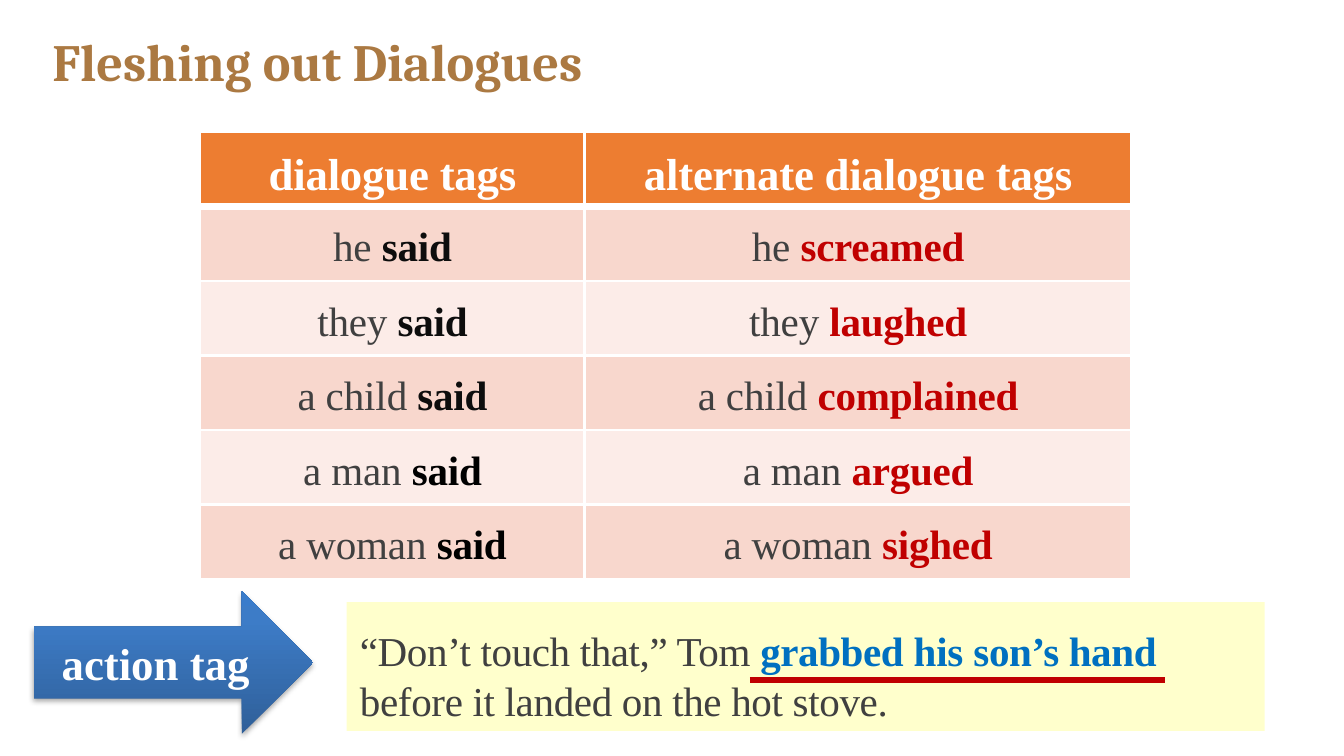
import copy

import pptx
import pptx.dml.color
import pptx.enum.shapes
import pptx.enum.text
import pptx.oxml.ns
import pptx.util
from lxml import etree

RGB = pptx.dml.color.RGBColor
Pt = pptx.util.Pt
Inches = pptx.util.Inches
qn = pptx.oxml.ns.qn
SHAPE = pptx.enum.shapes.MSO_SHAPE
ANCHOR = pptx.enum.text.MSO_ANCHOR
ALIGN = pptx.enum.text.PP_ALIGN

WHITE = RGB(0xFF, 0xFF, 0xFF)
BLACK = RGB(0, 0, 0)
INK = RGB(0x0D, 0x0D, 0x0D)
GREY = RGB(0x40, 0x40, 0x40)
RED = RGB(0xC0, 0, 0)
BLUE = RGB(0, 0x70, 0xC0)
BROWN = RGB(0xAB, 0x79, 0x42)
ORANGE = RGB(0xED, 0x7D, 0x31)
BANDS = [RGB(0xF8, 0xD7, 0xCD), RGB(0xFC, 0xEC, 0xE8)]
CREAM = RGB(0xFF, 0xFF, 0xCC)
STOPS = [(0, RGB(0x2F, 0x5F, 0x99)), (0.8, RGB(0x3D, 0x7C, 0xC7)),
         (1, RGB(0x3A, 0x7C, 0xCB))]

WIDE = 10
HIGH = WIDE * 9 / 16
SERIF = "Times New Roman"
WHO = ["he", "they", "a child", "a man", "a woman"]
PLAIN = [("said", INK)] * 3 + [("said", BLACK)] * 2
VIVID = [(verb, RED) for verb in
         ["screamed", "laughed", "complained", "argued", "sighed"]]
TOP = 0.98
DEPTH = 3.33


def write(frame, parts, size, font=SERIF, align=ALIGN.LEFT):
    """Fill the first paragraph with (text, colour, bold, spacing) runs."""
    para = frame.paragraphs[0]
    para.alignment = align
    for text, color, bold, gap in parts:
        run = para.add_run()
        run.text = text
        run.font.name = font
        run.font.size = Pt(size)
        run.font.bold = bold
        run.font.color.rgb = color
        run.font._element.set("spc", str(round(gap * 100)))


def pad(box, left, top, right, bottom):
    box.margin_left, box.margin_top = Inches(left), Inches(top)
    box.margin_right, box.margin_bottom = Inches(right), Inches(bottom)


def title(slide, box):
    frame = slide.shapes.add_textbox(*map(Inches, box)).text_frame
    frame.word_wrap = True
    pad(frame, 0.01, 0.01, 0, 0)
    write(frame, [("Fleshing out Dialogues", BROWN, True, -0.04)], 28, "Cambria")


def edge(cell, side, width):
    props = cell._tc.get_or_add_tcPr()
    line = etree.SubElement(props, qn("a:ln" + side), w=str(Pt(width)))
    fill = etree.SubElement(line, qn("a:solidFill"))
    etree.SubElement(fill, qn("a:srgbClr"), val=str(WHITE))


def tags(slide, box, head, verbs):
    """Place a one-column table of speakers and their verbs."""
    rows = [[(head, WHITE, True, -0.1)]]
    for who, (verb, color) in zip(WHO, verbs):
        rows.append([(who + " ", GREY, False, -0.05), (verb, color, True, -0.1)])
    grid = slide.shapes.add_table(len(rows), 1, *map(Inches, box)).table
    for i, parts in enumerate(rows):
        cell = grid.cell(i, 0)
        pad(cell, 0, 0.14, 0, 0)
        thick = {(0, "B"), (1, "T")}
        for side in "LRTB":
            edge(cell, side, 4.25 if (i, side) in thick else 1.5)
        cell.fill.solid()
        cell.fill.fore_color.rgb = BANDS[(i - 1) % 2] if i else ORANGE
        write(cell.text_frame, parts, 22 if i else 24, align=ALIGN.CENTER)


def block(slide, kind, box, anchor):
    shape = slide.shapes.add_shape(kind, *map(Inches, box))
    shape.shadow.inherit = False
    shape.line.fill.background()
    shape.text_frame.word_wrap = True
    shape.text_frame.vertical_anchor = anchor
    return shape


def quote(slide, box):
    shape = block(slide, SHAPE.RECTANGLE, box, ANCHOR.BOTTOM)
    shape.fill.solid()
    shape.fill.fore_color.rgb = CREAM
    write(shape.text_frame, [
        ("“Don’t touch that,” Tom ", GREY, False, -0.2),
        ("grabbed ", BLUE, True, -0.2),
        ("his ", BLUE, True, -0.1),
        ("son’s hand ", BLUE, True, -0.2),
        ("before it landed on the hot stove.", GREY, False, -0.17)], 22)


def rule(slide, left, right, level):
    """Underline the action with a red line."""
    line = slide.shapes.add_connector(
        pptx.enum.shapes.MSO_CONNECTOR.STRAIGHT,
        *map(Inches, (left, level, right, level)))
    line.line.color.rgb = RED
    line.line.width = Pt(3)
    etree.SubElement(line._element.spPr, qn("a:effectLst"))


def arrow(slide, box):
    shape = block(slide, SHAPE.RIGHT_ARROW, box, ANCHOR.MIDDLE)
    shape.fill.gradient()
    shape.fill.gradient_angle = 90
    props = shape._element.spPr
    stops = props.find(".//" + qn("a:gsLst"))
    stops.insert(1, copy.deepcopy(stops[0]))
    for stop, (spot, color) in zip(shape.fill.gradient_stops, STOPS):
        stop.position = spot
        stop.color.rgb = color
    shade = etree.SubElement(
        props.find(qn("a:effectLst")), qn("a:outerShdw"), blurRad=str(Pt(3.1)),
        dist=str(Pt(1.8)), dir="5400000", rotWithShape="0")
    tint = etree.SubElement(shade, qn("a:srgbClr"), val=str(BLACK))
    etree.SubElement(tint, qn("a:alpha"), val="35000")
    write(shape.text_frame, [("action tag", WHITE, True, 0)], 24,
          align=ALIGN.CENTER)


def main():
    deck = pptx.Presentation()
    deck.slide_width, deck.slide_height = Inches(WIDE), Inches(HIGH)
    slide = deck.slides.add_slide(deck.slide_layouts[6])
    title(slide, (0.38, 0.21, 6, 0.49))
    tags(slide, (1.49, TOP, 2.86, DEPTH), "dialogue tags", PLAIN)
    tags(slide, (4.35, TOP, 4.07, DEPTH), "alternate dialogue tags", VIVID)
    quote(slide, (2.58, 4.48, 6.83, 0.96))
    arrow(slide, (0.25, 4.4, 2.08, 1.06))
    rule(slide, 5.58, 8.67, 5.06)
    deck.save("out.pptx")


if __name__ == "__main__":
    main()
